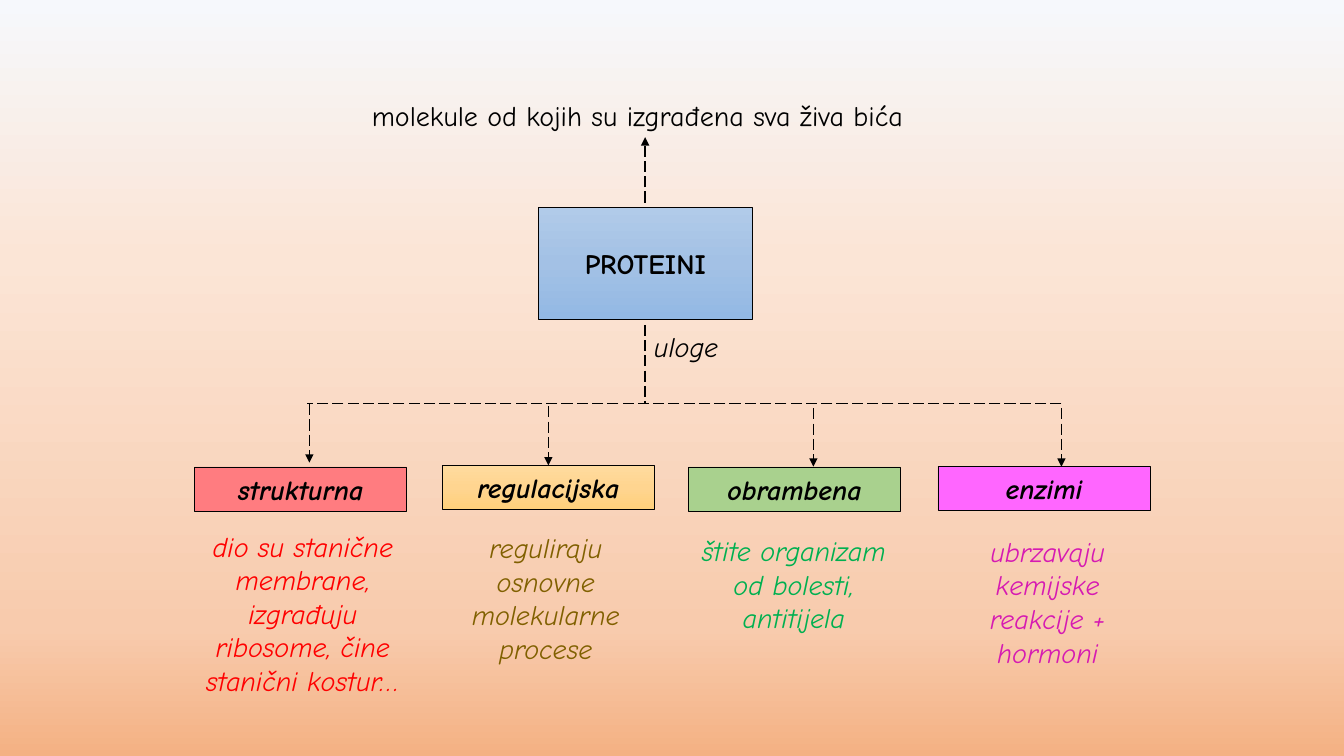
from copy import deepcopy

from pptx import Presentation
from pptx.dml.color import RGBColor
from pptx.enum.dml import MSO_LINE
from pptx.enum.shapes import MSO_CONNECTOR, MSO_SHAPE
from pptx.enum.text import MSO_ANCHOR, MSO_AUTO_SIZE, PP_ALIGN
from pptx.oxml.ns import qn
from pptx.util import Pt
from lxml.etree import SubElement

FONT = "Comic Neue"
BLACK = "000000"
BACKGROUND = [(0, "F6F8FC"), (0.34, "FBE5D6"), (0.83, "F8CBAD"), (1, "F4B183")]
BLUE = [(0, "B1CBE9"), (0.5, "A3C1E5"), (1, "93B9E4")]
GOLD = [(0, "FFDB9E"), (0.5, "FFD590"), (1, "FFD07C")]

CENTRE_X = 460.8
BUS_Y = 288
ROLE_WIDTH, ROLE_HEIGHT = 151.5, 31.5

# name, fill, box left and top, arrow x, top and bottom,
# description, its colour, left, top, width and height
ROLES = [
    ("strukturna", "FF7C80", (139, 333.5), (221, 288.7, 330.5),
     "dio su stanične membrane, izgrađuju ribosome, čine stanični kostur…",
     "FF0000", (126, 374.4, 180.7, 128)),
    ("regulacijska", GOLD, (316, 332.4), (391.7, 290.2, 332.4),
     "reguliraju osnovne molekularne procese",
     "806000", (309.6, 375.4, 160.6, 104)),
    ("obrambena", "A9D18E", (491.8, 333.5), (581, 291.6, 333.4),
     "štite organizam od bolesti, antitijela",
     "00B050", (490.3, 377.5, 153.4, 104)),
    ("enzimi", "FF66FF", (670, 333), (758.2, 291.6, 333.4),
     "ubrzavaju kemijske reakcije + hormoni",
     "D61AB2", (676, 378, 144.7, 104)),
]


def rgb(color):
    return RGBColor.from_string(color)


def set_fill(fill, paint):
    """Fill with one hex colour, or with (position, colour) stops from top to bottom."""
    if isinstance(paint, str):
        fill.solid()
        fill.fore_color.rgb = rgb(paint)
        return
    fill.gradient()
    fill.gradient_angle = 270
    first = fill.gradient_stops[0]._gs
    for _ in paint[2:]:
        first.addnext(deepcopy(first))
    for stop, (position, color) in zip(fill.gradient_stops, paint):
        stop.position = position
        stop.color.rgb = rgb(color)


def set_text(shape, text, color=BLACK, bold=False, italic=False, align=PP_ALIGN.CENTER):
    tf = shape.text_frame
    tf.text = text
    tf.word_wrap = True
    p = tf.paragraphs[0]
    p.alignment = align
    font = p.runs[0].font
    font.name, font.size = FONT, Pt(20)
    font.bold, font.italic = bold, italic
    font.color.rgb = rgb(color)


def style_box(shape, paint):
    set_fill(shape.fill, paint)
    shape.line.color.rgb = rgb(BLACK)
    shape.line.width = Pt(0.5)
    shape.text_frame.vertical_anchor = MSO_ANCHOR.MIDDLE


def add_title(s, text, left, top, width, height):
    title = s.shapes.title
    title.left, title.top, title.width, title.height = map(Pt, (left, top, width, height))
    set_text(title, text, bold=True)
    style_box(title, BLUE)


def add_role_box(s, text, paint, left, top):
    box = s.shapes.add_shape(MSO_SHAPE.RECTANGLE, Pt(left), Pt(top),
                             Pt(ROLE_WIDTH), Pt(ROLE_HEIGHT))
    box.shadow.inherit = False
    set_text(box, text, bold=True, italic=True)
    style_box(box, paint)


def add_label(s, text, left, top, width, height, **style):
    label = s.shapes.add_textbox(Pt(left), Pt(top), Pt(width), Pt(height))
    set_text(label, text, **style)
    label.text_frame.auto_size = MSO_AUTO_SIZE.SHAPE_TO_FIT_TEXT


def add_dashed_line(s, x1, y1, x2, y2, arrow=False):
    line = s.shapes.add_connector(MSO_CONNECTOR.STRAIGHT, Pt(x1), Pt(y1), Pt(x2), Pt(y2))
    line.line.color.rgb = rgb(BLACK)
    line.line.width = Pt(1)
    line.line.dash_style = MSO_LINE.LONG_DASH
    if arrow:
        SubElement(line.line._get_or_add_ln(), qn("a:tailEnd"), type="triangle")
    SubElement(line._element.spPr, qn("a:effectLst"))


def main():
    prs = Presentation()
    prs.slide_width, prs.slide_height = Pt(960), Pt(540)
    s = prs.slides.add_slide(prs.slide_layouts[5])
    set_fill(s.background.fill, BACKGROUND)

    add_title(s, "PROTEINI", 384.3, 147.9, 153.4, 80)
    add_label(s, "molekule od kojih su izgrađena sva živa bića",
              258.5, 67, 517, 31.5, align=PP_ALIGN.LEFT)
    add_label(s, "uloge", 460, 232, 110, 31.5, italic=True, align=PP_ALIGN.LEFT)

    add_dashed_line(s, CENTRE_X, 144.7, CENTRE_X, 98, arrow=True)
    add_dashed_line(s, CENTRE_X, 232, CENTRE_X, BUS_Y)
    add_dashed_line(s, 758.2, BUS_Y, 219.6, BUS_Y)

    for name, paint, corner, (x, top, bottom), description, color, frame in ROLES:
        add_dashed_line(s, x, top, x, bottom, arrow=True)
        add_role_box(s, name, paint, *corner)
        add_label(s, description, *frame, color=color, italic=True)

    prs.save("out.pptx")


if __name__ == "__main__":
    main()
